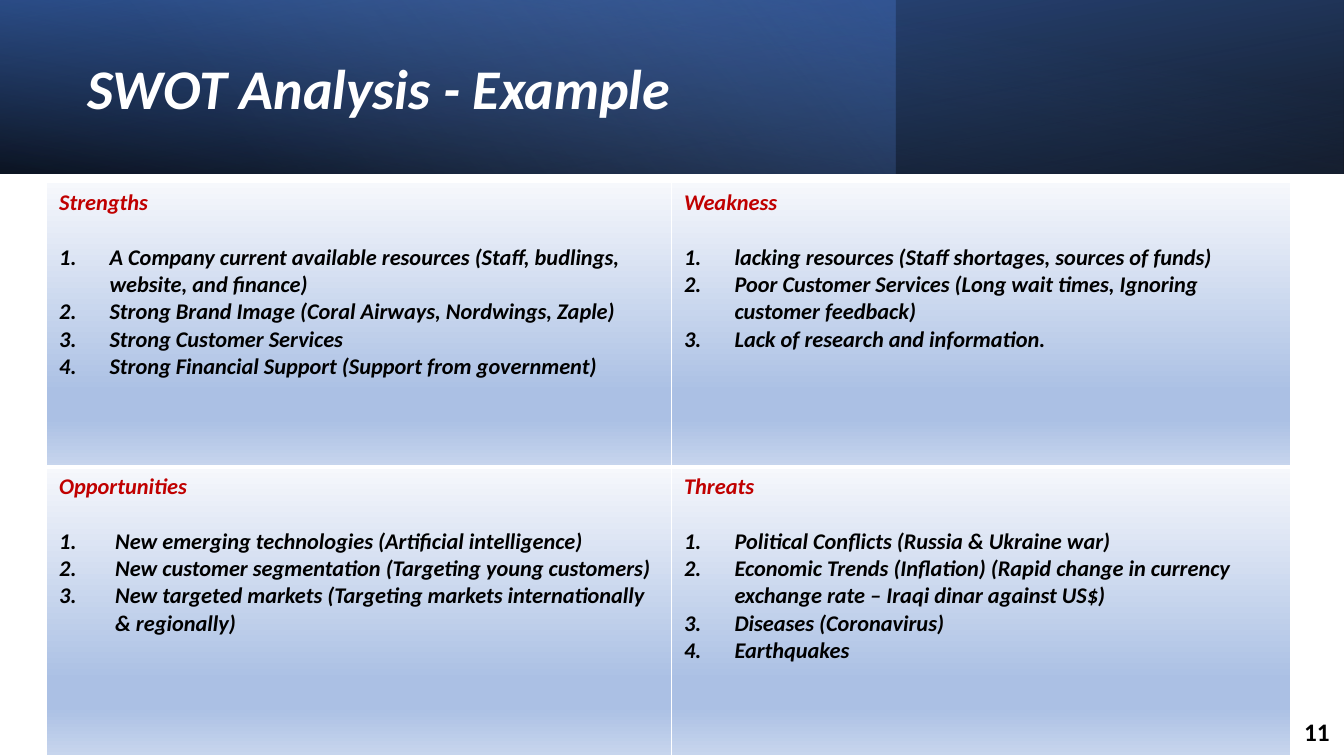
from dataclasses import dataclass

from lxml import etree
from pptx import Presentation
from pptx.dml.color import RGBColor
from pptx.enum import shapes, text
from pptx.oxml import ns
from pptx.util import Pt

FONT = "Calibri"
WHITE, BLACK, RED = "FFFFFF", "000000", "C00000"


@dataclass(frozen=True)
class Stop:
    position: int
    color: str
    opacity: int = 100


@dataclass(frozen=True)
class Band:
    width: float
    angle: int
    stops: tuple[Stop, ...]
    rotation: int = 0
    flipped: bool = False


@dataclass(frozen=True)
class Quadrant:
    heading: str
    points: tuple[str, ...]
    indent: int = 36


@dataclass(frozen=True)
class Label:
    left: float
    top: float
    width: float
    height: float
    words: str
    size: int
    color: str
    italic: bool = False
    align: text.PP_ALIGN = text.PP_ALIGN.LEFT
    line_spacing: float = 1.0
    space_after: int = 0


PAGE_WIDTH, PAGE_HEIGHT, BANNER_HEIGHT = 960, 540, 124

BANDS = (
    Band(PAGE_WIDTH, 100, (Stop(0, BLACK, 96), Stop(100, "2F5597")), 180, True),
    Band(640, 140, (Stop(0, "4472C4", 41), Stop(74, "8FAADC", 0))),
    Band(PAGE_WIDTH, 260, (Stop(0, BLACK, 63), Stop(78, "4472C4", 15)), 0, True),
)
CELL_STOPS = (Stop(0, "F6F8FC"), Stop(74, "ABC0E4"), Stop(83, "ABC0E4"), Stop(100, "C7D5ED"))

LABELS = (
    Label(55.4, 19.4, 556, 91.4, "SWOT Analysis - Example", 40, WHITE, True, line_spacing=0.9),
    Label(921.6, 508.3, 35.3, 28.8, "11", 18, BLACK, align=text.PP_ALIGN.RIGHT, space_after=6),
)

COLUMN_WIDTHS = (446.4, 442.1)
ROW_HEIGHTS = (203, 206)
QUADRANTS = (
    (
        Quadrant("Strengths", (
            "A Company current available resources (Staff, budlings, website, and finance)",
            "Strong Brand Image (Coral Airways, Nordwings, Zaple)",
            "Strong Customer Services",
            "Strong Financial Support (Support from government)",
        )),
        Quadrant("Weakness", (
            "lacking resources (Staff shortages, sources of funds)",
            "Poor Customer Services (Long wait times, Ignoring customer feedback)",
            "Lack of research and information.",
        )),
    ),
    (
        Quadrant("Opportunities", (
            "New emerging technologies (Artificial intelligence)",
            "New customer segmentation (Targeting young customers)",
            "New targeted markets (Targeting markets internationally & regionally)",
        ), 40),
        Quadrant("Threats", (
            "Political Conflicts (Russia & Ukraine war)",
            "Economic Trends (Inflation) (Rapid change in currency exchange rate – Iraqi dinar against US$)",
            "Diseases (Coronavirus)",
            "Earthquakes",
        )),
    ),
)


def rgb(color: str) -> RGBColor:
    return RGBColor.from_string(color)


def add_child(parent, tag: str, **attributes):
    return etree.SubElement(parent, ns.qn(tag), {key: str(value) for key, value in attributes.items()})


def set_gradient(owner, properties, stops: tuple[Stop, ...], angle: int) -> None:
    owner.fill.background()
    empty_fill = properties.find(ns.qn("a:noFill"))
    gradient = etree.Element(ns.qn("a:gradFill"), rotWithShape="1")
    stop_list = add_child(gradient, "a:gsLst")
    for stop in stops:
        entry = add_child(stop_list, "a:gs", pos=stop.position * 1000)
        color = add_child(entry, "a:srgbClr", val=stop.color)
        if stop.opacity < 100:
            add_child(color, "a:alpha", val=stop.opacity * 1000)
    add_child(gradient, "a:lin", ang=angle * 60000, scaled=0)
    properties.replace(empty_fill, gradient)


def set_borders(properties, bottom: float) -> None:
    for side, width in (("L", 1), ("R", 1), ("T", 1), ("B", bottom)):
        line = add_child(properties, f"a:ln{side}", w=Pt(width))
        add_child(add_child(line, "a:solidFill"), "a:srgbClr", val=WHITE)


def style_text(para, size: int, color: str, italic: bool) -> None:
    for span in para.runs:
        span.font.name = FONT
        span.font.size = Pt(size)
        span.font.bold = True
        span.font.italic = italic
        span.font.color.rgb = rgb(color)


def draw_band(page, band: Band) -> None:
    box = page.shapes.add_shape(shapes.MSO_SHAPE.RECTANGLE, 0, 0, Pt(band.width), Pt(BANNER_HEIGHT))
    box.shadow.inherit = False
    box.line.fill.background()
    box.rotation = band.rotation
    properties = box._element.spPr
    if band.flipped:
        properties.find(ns.qn("a:xfrm")).set("flipH", "1")
    set_gradient(box, properties, band.stops, band.angle)


def draw_label(page, label: Label) -> None:
    box = page.shapes.add_textbox(Pt(label.left), Pt(label.top), Pt(label.width), Pt(label.height))
    frame = box.text_frame
    frame.word_wrap = True
    frame.vertical_anchor = text.MSO_ANCHOR.MIDDLE
    frame.text = label.words
    para = frame.paragraphs[0]
    para.alignment = label.align
    para.line_spacing = label.line_spacing
    para.space_after = Pt(label.space_after)
    style_text(para, label.size, label.color, label.italic)


def fill_cell(cell, quadrant: Quadrant, bottom_border: float) -> None:
    cell.margin_left = cell.margin_right = Pt(9)
    cell.margin_top = cell.margin_bottom = Pt(4.5)
    properties = cell._tc.get_or_add_tcPr()
    set_borders(properties, bottom_border)
    set_gradient(cell, properties, CELL_STOPS, 90)

    frame = cell.text_frame
    frame.text = quadrant.heading
    heading = frame.paragraphs[0]
    heading.space_after = Pt(19.5)
    style_text(heading, 16, RED, True)
    for point in quadrant.points:
        para = frame.add_paragraph()
        para.text = point
        style_text(para, 16, BLACK, True)
        layout = para._p.get_or_add_pPr()
        layout.set("marL", str(Pt(quadrant.indent)))
        layout.set("indent", str(-Pt(quadrant.indent)))
        add_child(layout, "a:buFont", typeface="+mj-lt")
        add_child(layout, "a:buAutoNum", type="arabicPeriod")


def draw_table(page) -> None:
    frame = page.shapes.add_table(
        len(ROW_HEIGHTS), len(COLUMN_WIDTHS),
        Pt(33.3), Pt(130.5), Pt(sum(COLUMN_WIDTHS)), Pt(sum(ROW_HEIGHTS)),
    )
    table = frame.table
    table.first_row = table.horz_banding = False
    for column, width in zip(table.columns, COLUMN_WIDTHS):
        column.width = Pt(width)
    for row, height, quadrants, border in zip(table.rows, ROW_HEIGHTS, QUADRANTS, (3, 1)):
        row.height = Pt(height)
        for cell, quadrant in zip(row.cells, quadrants):
            fill_cell(cell, quadrant, border)


def main() -> None:
    deck = Presentation()
    deck.slide_width, deck.slide_height = Pt(PAGE_WIDTH), Pt(PAGE_HEIGHT)
    page = deck.slides.add_slide(deck.slide_layouts[6])
    for band in BANDS:
        draw_band(page, band)
    for label in LABELS:
        draw_label(page, label)
    draw_table(page)
    deck.save("out.pptx")


if __name__ == "__main__":
    main()
